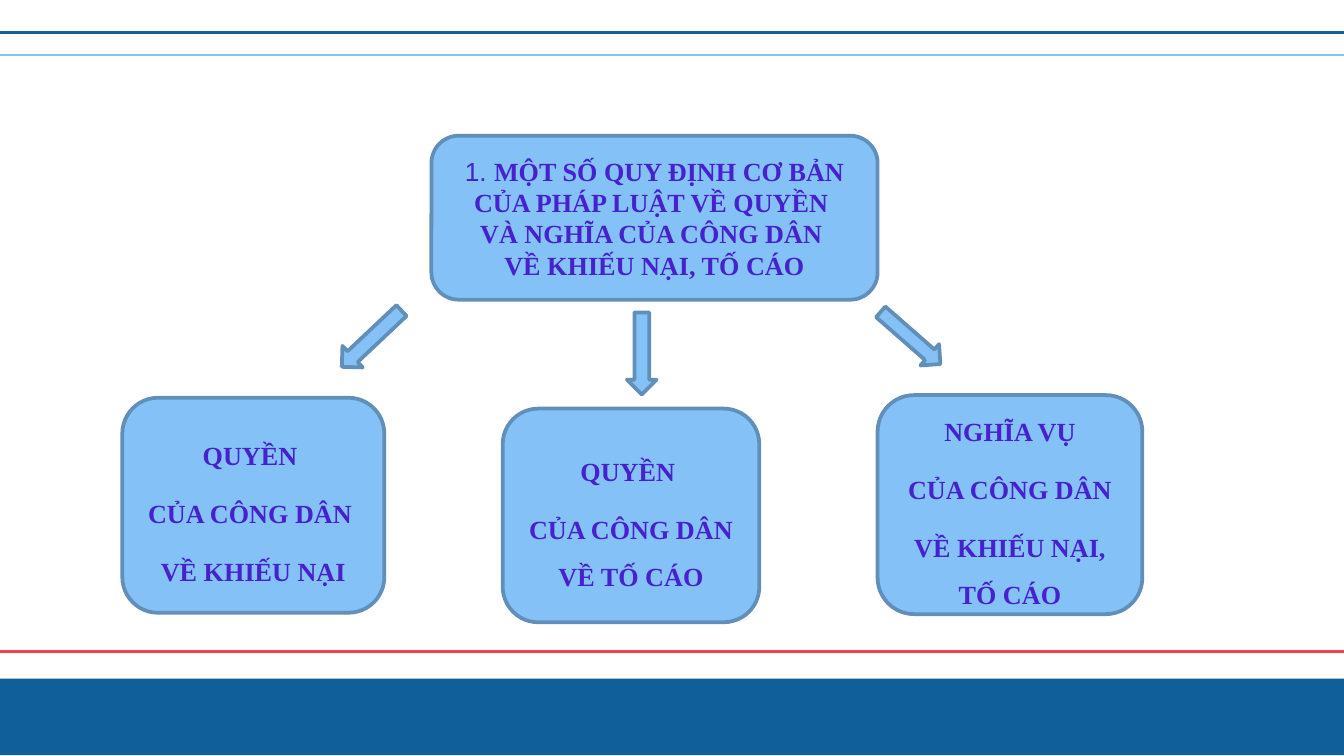
import pptx
import pptx.util
import pptx.dml.color
import pptx.enum.shapes
import pptx.enum.text
import pptx.oxml.ns
import lxml.etree

Inches = pptx.util.Inches
Pt = pptx.util.Pt
RGBColor = pptx.dml.color.RGBColor
MSO_SHAPE = pptx.enum.shapes.MSO_SHAPE

NAVY = RGBColor(0x10, 0x5F, 0x9A)
SKY = RGBColor(0x83, 0xC1, 0xF7)
STEEL = RGBColor(0x61, 0x8F, 0xB7)
RED = RGBColor(0xF1, 0x40, 0x52)
VIOLET = RGBColor(0x46, 0x21, 0xCD)

HEADING = {"size": Pt(14), "name": "Times New Roman", "bold": True}
NUMBER = {"size": Pt(14), "name": "Arial", "bold": False}
TIGHT = {"alignment": pptx.enum.text.PP_ALIGN.CENTER}
SPACED = {**TIGHT, "line_spacing": 1.5, "space_before": Pt(3), "space_after": Pt(3)}


def apply(target, values):
    for name, value in values.items():
        setattr(target, name, value)


class Diagram:
    def __init__(self, slide):
        self.s = slide

    def shape(self, kind, box, fill=SKY, line=STEEL):
        sp = self.s.shapes.add_shape(kind, *map(Inches, box))
        sp.shadow.inherit = False
        sp.fill.solid()
        sp.fill.fore_color.rgb = fill
        if line is None:
            sp.line.fill.background()
        else:
            sp.line.color.rgb = line
            sp.line.width = Pt(2)
        return sp

    def rule(self, y, color):
        cx = self.s.shapes.add_connector(
            pptx.enum.shapes.MSO_CONNECTOR.STRAIGHT,
            Inches(0), Inches(y), Inches(10), Inches(y))
        cx.line.color.rgb = color
        cx.line.width = Pt(1.5)
        props = cx._element.spPr
        lxml.etree.SubElement(props, pptx.oxml.ns.qn("a:effectLst"))

    def arrow(self, box, angle):
        self.shape(MSO_SHAPE.RIGHT_ARROW, box).rotation = angle

    def box(self, kind, box, lines, layout, number=None):
        tf = self.shape(kind, box).text_frame
        tf.word_wrap = True
        tf.vertical_anchor = pptx.enum.text.MSO_ANCHOR.MIDDLE
        for i, line in enumerate(lines):
            p = tf.add_paragraph() if i else tf.paragraphs[0]
            apply(p, layout)
            if i == 0:
                p.space_before = Pt(0)
                if number:
                    self.run(p, number, NUMBER)
            self.run(p, line, HEADING)

    def run(self, p, text, style):
        r = p.add_run()
        r.text = text
        apply(r.font, style)
        r.font.color.rgb = VIOLET


def main():
    prs = pptx.Presentation()
    prs.slide_width = Inches(10)
    prs.slide_height = prs.slide_width * 9 // 16
    d = Diagram(prs.slides.add_slide(prs.slide_layouts[6]))

    d.shape(MSO_SHAPE.RECTANGLE, (0, 5.05, 10, 0.57), NAVY, None)
    for y, color in ((4.85, RED), (0.41, SKY), (0.24, NAVY)):
        d.rule(y, color)

    d.box(MSO_SHAPE.ROUNDED_RECTANGLE, (3.21, 1.01, 3.32, 1.22),
          ["MỘT SỐ QUY ĐỊNH CƠ BẢN CỦA PHÁP LUẬT VỀ QUYỀN ",
           "VÀ NGHĨA CỦA CÔNG DÂN ",
           "VỀ KHIẾU NẠI, TỐ CÁO"], TIGHT, "1. ")

    for box, angle in (((2.46, 2.41, 0.61, 0.22), 136.7),
                       ((6.48, 2.41, 0.59, 0.21), 41.2),
                       ((4.47, 2.52, 0.61, 0.22), 90)):
        d.arrow(box, angle)

    for box, lines in (
            ((0.91, 2.96, 1.95, 1.6), ["QUYỀN ", "CỦA CÔNG DÂN ", "VỀ KHIẾU NẠI"]),
            ((6.53, 2.94, 1.97, 1.63),
             ["NGHĨA VỤ", "CỦA CÔNG DÂN", "VỀ KHIẾU NẠI, TỐ CÁO"]),
            ((3.74, 3.04, 1.91, 1.59), ["QUYỀN ", "CỦA CÔNG DÂN VỀ TỐ CÁO"])):
        d.box(MSO_SHAPE.FLOWCHART_ALTERNATE_PROCESS, box, lines, SPACED)

    prs.save("out.pptx")


if __name__ == "__main__":
    main()
